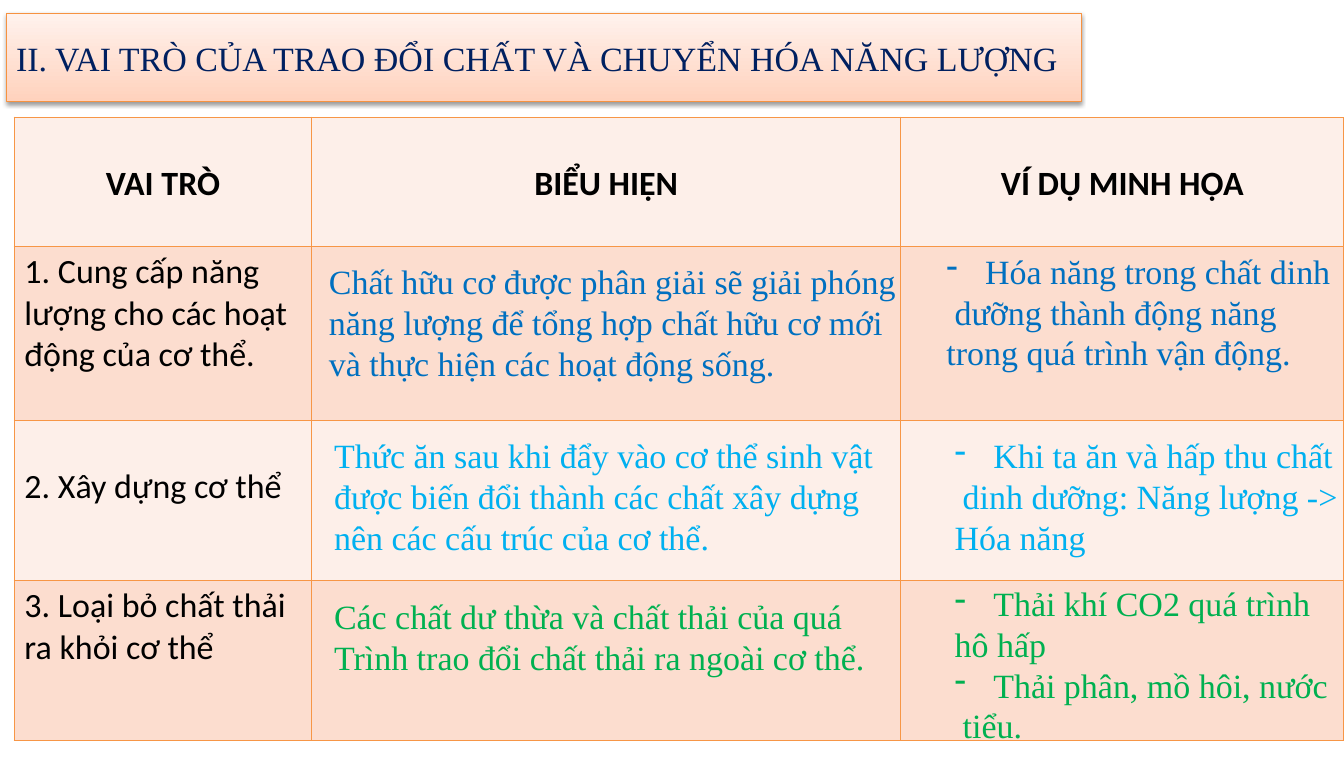
from dataclasses import dataclass

from lxml import etree
from pptx import Presentation
from pptx.dml.color import RGBColor
from pptx.enum.shapes import MSO_SHAPE
from pptx.enum.text import MSO_ANCHOR, PP_ALIGN
from pptx.oxml import parse_xml
from pptx.oxml.ns import qn
from pptx.util import Inches, Pt

RECTANGLE = MSO_SHAPE.RECTANGLE
MIDDLE = MSO_ANCHOR.MIDDLE
LEFT, CENTER = PP_ALIGN.LEFT, PP_ALIGN.CENTER
DRAWING_NS = "http://schemas.openxmlformats.org/drawingml/2006/main"


@dataclass(frozen=True)
class Theme:
    table_font: str = "Calibri"
    note_font: str = "Times New Roman"
    size: int = 24
    title: str = "002060"
    title_line: str = "F69240"
    title_stops: tuple = ("FFD2BD", "FFF2ED")
    text: str = "000000"
    border: str = "F79646"
    bands: tuple = ("FDEFE9", "FCDDCF")
    blue: str = "0070C0"
    sky: str = "00B0F0"
    green: str = "00B050"


theme = Theme()


def style(para, font, color, bold=False):
    para.font.name = font
    para.font.size = Pt(theme.size)
    para.font.bold = bold
    para.font.color.rgb = RGBColor.from_string(color)


deck = Presentation()
deck.slide_width, deck.slide_height = Inches(13.19), Inches(7.5)
page = deck.slides.add_slide(deck.slide_layouts[6])

banner = page.shapes.add_shape(RECTANGLE, Inches(0.06), Inches(0.13), Inches(10.55), Inches(0.87))
banner.fill.gradient()
banner.fill.gradient_angle = 90
for stop, position, color in zip(banner.fill.gradient_stops, (0, 1), theme.title_stops):
    stop.position = position
    stop.color.rgb = RGBColor.from_string(color)
banner.line.color.rgb = RGBColor.from_string(theme.title_line)
banner.line.width = Pt(0.75)
banner.shadow.inherit = False
effects = banner.element.spPr.find(qn("a:effectLst"))
effects.append(parse_xml(
    f'<a:outerShdw xmlns:a="{DRAWING_NS}" blurRad="{Pt(3.1)}" dist="{Pt(1.6)}" dir="5400000" '
    'rotWithShape="0"><a:srgbClr val="000000"><a:alpha val="38000"/></a:srgbClr></a:outerShdw>'))
banner.text_frame.vertical_anchor = MIDDLE
banner.text_frame.word_wrap = True
para = banner.text_frame.paragraphs[0]
para.text = "II. VAI TRÒ CỦA TRAO ĐỔI CHẤT VÀ CHUYỂN HÓA NĂNG LƯỢNG"
para.alignment = LEFT
style(para, theme.note_font, theme.title)

column_widths = (2.92, 5.78, 4.35)
row_heights = (1.27, 1.71, 1.57, 1.57)
table_rows = (
    ("VAI TRÒ", "BIỂU HIỆN", "VÍ DỤ MINH HỌA"),
    ("1. Cung cấp năng lượng cho các hoạt động của cơ thể.", "", ""),
    ("2. Xây dựng cơ thể", "", ""),
    ("3. Loại bỏ chất thải ra khỏi cơ thể", "", ""),
)
top_margins = (0.45, 0.05, 0.45, 0.05)
table = page.shapes.add_table(
    len(row_heights), len(column_widths), Inches(0.14), Inches(1.15),
    Inches(sum(column_widths)), Inches(sum(row_heights))).table
for column, width in zip(table.columns, column_widths):
    column.width = Inches(width)
for row_index, texts in enumerate(table_rows):
    table.rows[row_index].height = Inches(row_heights[row_index])
    is_header = row_index == 0
    for column_index, text in enumerate(texts):
        cell = table.cell(row_index, column_index)
        cell.margin_top = Inches(top_margins[row_index])
        properties = cell._tc.get_or_add_tcPr()
        for side in ("L", "R", "T", "B"):
            properties.append(parse_xml(
                f'<a:ln{side} xmlns:a="{DRAWING_NS}" w="{Pt(1)}"><a:solidFill>'
                f'<a:srgbClr val="{theme.border}"/></a:solidFill></a:ln{side}>'))
        cell.fill.solid()
        cell.fill.fore_color.rgb = RGBColor.from_string(theme.bands[row_index % 2])
        para = cell.text_frame.paragraphs[0]
        para.text = text
        para.alignment = CENTER if is_header else LEFT
        style(para, theme.table_font, theme.text, is_header)

BULLET, INDENTED, PLAIN = "bullet", "indented", "plain"
notes = (
    (3.13, 2.51, 5.9, 1.72, theme.blue, (
        (PLAIN, "Chất hữu cơ được phân giải sẽ giải phóng"),
        (PLAIN, "năng lượng để tổng hợp chất hữu cơ mới"),
        (PLAIN, "và thực hiện các hoạt động sống."))),
    (9.19, 2.41, 4, 1.72, theme.blue, (
        (BULLET, "Hóa năng trong chất dinh"),
        (INDENTED, "dưỡng thành động năng"),
        (PLAIN, "trong quá trình vận động."))),
    (3.18, 4.22, 5.62, 1.72, theme.sky, (
        (PLAIN, "Thức ăn sau khi đẩy vào cơ thể sinh vật"),
        (PLAIN, "được biến đổi thành các chất xây dựng"),
        (PLAIN, "nên các cấu trúc của cơ thể."))),
    (9.27, 4.22, 4, 1.85, theme.sky, (
        (BULLET, "Khi ta ăn và hấp thu chất"),
        (INDENTED, "dinh dưỡng: Năng lượng ->"),
        (PLAIN, "Hóa năng"))),
    (3.18, 5.8, 5.45, 1.31, theme.green, (
        (PLAIN, "Các chất dư thừa và chất thải của quá"),
        (PLAIN, "Trình trao đổi chất thải ra ngoài cơ thể."))),
    (9.27, 5.67, 3.89, 2.12, theme.green, (
        (BULLET, "Thải khí CO2 quá trình"),
        (PLAIN, "hô hấp"),
        (BULLET, "Thải phân, mồ hôi, nước"),
        (INDENTED, "tiểu."))),
)
for left, top, width, height, color, lines in notes:
    box = page.shapes.add_textbox(Inches(left), Inches(top), Inches(width), Inches(height))
    frame = box.text_frame
    frame.word_wrap = False
    for index, (kind, text) in enumerate(lines):
        para = frame.add_paragraph() if index else frame.paragraphs[0]
        para.text = text
        para.alignment = LEFT
        style(para, theme.note_font, color)
        properties = para._p.get_or_add_pPr()
        if kind == BULLET:
            properties.set("marL", str(Inches(0.38)))
            properties.set("indent", str(Inches(-0.38)))
            bullet = etree.Element(qn("a:buChar"), char="-")
            properties.insert(0, bullet)
        elif kind == INDENTED:
            properties.set("marL", str(Inches(0.08)))

deck.save("out.pptx")
